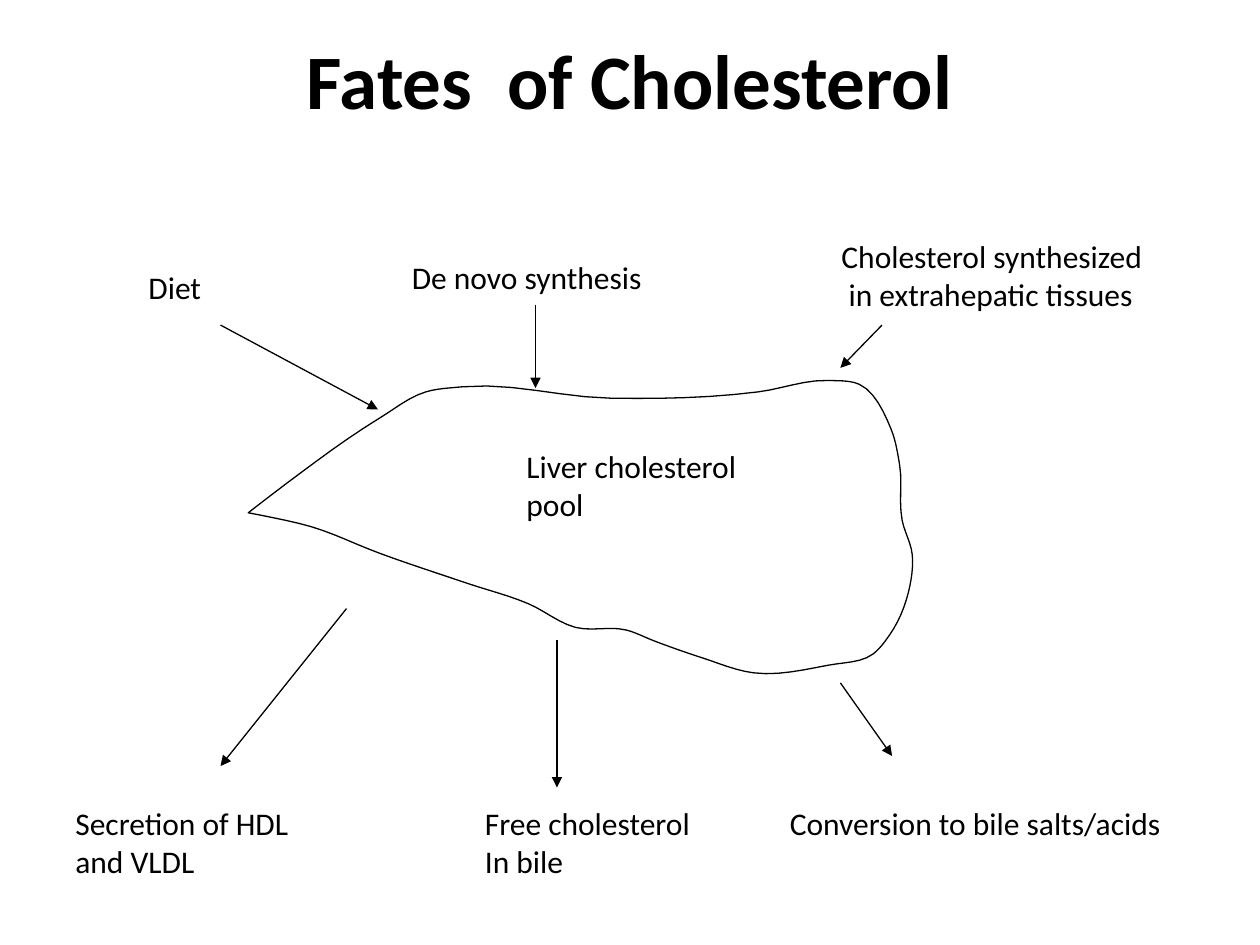
from pptx import Presentation
from pptx.dml.color import RGBColor
from pptx.enum.shapes import MSO_CONNECTOR
from pptx.enum.text import MSO_ANCHOR, MSO_AUTO_SIZE, PP_ALIGN
from pptx.oxml.ns import qn
from pptx.util import Inches, Pt
from lxml import etree

BLACK = RGBColor(0, 0, 0)
STRAIGHT = MSO_CONNECTOR.STRAIGHT
MIDDLE = MSO_ANCHOR.MIDDLE
CENTER = PP_ALIGN.CENTER
LEFT = PP_ALIGN.LEFT
GROW = MSO_AUTO_SIZE.SHAPE_TO_FIT_TEXT
FONT = "Calibri"
STEPS = 6
ONE_ROW, TWO_ROWS = 0.4, 0.7
BASE = 6.33

TITLE = (0.5, 0, 9, 1.25)
LABELS = [
    (1.08, 2.08, 0.65, ["Diet"]),
    (3.17, 2, 2.24, ["De novo synthesis"]),
    (6.58, 1.83, 2.85,
     ["Cholesterol synthesized", " in extrahepatic tissues"]),
    (4.08, 3.5, 2.02, ["Liver cholesterol", "pool"]),
    (3.75, BASE, 1.99, ["Free cholesterol", "In bile"]),
    (6.17, BASE, 3.44, ["Conversion to bile salts/acids"]),
    (0.5, BASE, 2.1, ["Secretion of HDL", "and VLDL"]),
]
ARROWS = [
    (1.75, 2.58, 3, 3.25),
    (4.25, 2.42, 4.25, 3.08),
    (7, 2.58, 6.67, 2.92),
    (4.42, 5.08, 4.42, 6.25),
    (6.67, 5.42, 7.08, 6),
    (2.75, 4.83, 1.75, 6.08),
]
LIVER = (1.97, 3.02)
EDGE = [
    (0, 1.05), (0.3, 0.82), (1.04, 0.3), (1.41, 0.09), (1.7, 0.05),
    (2.87, 0.14), (4.05, 0.09), (4.59, 0), (4.85, 0.03), (5.1, 0.38),
    (5.17, 0.67), (5.19, 1.11), (5.27, 1.38), (5.24, 1.68), (5.09, 2.02),
    (4.96, 2.17), (4.6, 2.26), (4.01, 2.32), (3.6, 2.2), (3.23, 2.07),
    (3, 1.98), (2.6, 1.96), (2.22, 1.77), (1.74, 1.61), (1.04, 1.37),
    (0.5, 1.16), (0, 1.05),
]


def add_text(slide, box, lines, size, bold=False, align=LEFT):
    shape = slide.shapes.add_textbox(*map(Inches, box))
    frame = shape.text_frame
    for num, line in enumerate(lines):
        para = frame.add_paragraph() if num else frame.paragraphs[0]
        para.alignment = align
        run = para.add_run()
        run.text = line
        run.font.name = FONT
        run.font.size = Pt(size)
        run.font.bold = bold
        run.font.color.rgb = BLACK
    return frame


def add_title(slide, box):
    frame = add_text(slide, box, ["Fates  of Cholesterol"], 44, True, CENTER)
    frame.word_wrap = True
    frame.vertical_anchor = MIDDLE


def add_label(slide, left, top, width, lines):
    height = ONE_ROW if len(lines) == 1 else TWO_ROWS
    frame = add_text(slide, (left, top, width, height), lines, 18)
    frame.word_wrap = False
    frame.auto_size = GROW


def set_line(shape):
    shape.line.color.rgb = BLACK
    shape.line.width = Pt(0.75)


def add_arrow(slide, ends):
    arrow = slide.shapes.add_connector(STRAIGHT, *map(Inches, ends))
    set_line(arrow)
    tail = etree.SubElement(arrow.line._get_or_add_ln(), qn("a:tailEnd"))
    tail.set("type", "triangle")
    etree.SubElement(arrow._element.spPr, qn("a:effectLst"))


def gap(start, end):
    return max(abs(complex(*end) - complex(*start)), 0.01)


def slopes(points):
    ends = [points[0]] + points + [points[-1]]
    for prev, here, after in zip(ends, points, ends[2:]):
        back, ahead = gap(prev, here), gap(here, after)
        yield [((h - p) / back * ahead + (a - h) / ahead * back)
               / (back + ahead) for p, h, a in zip(prev, here, after)]


def smooth(points):
    leans = list(slopes(points))
    result = points[:1]
    for start, end, out, into in zip(points, points[1:], leans, leans[1:]):
        size = gap(start, end)
        for step in range(1, STEPS + 1):
            t = step / STEPS
            u = 1 - t
            result.append([
                u * u * (1 + 2 * t) * s + t * t * (3 - 2 * t) * e
                + size * t * u * (u * o - t * i)
                for s, e, o, i in zip(start, end, out, into)])
    return result


def add_liver(slide, corner):
    left, top = corner
    spots = [(Inches(left + x), Inches(top + y)) for x, y in smooth(EDGE)]
    path = slide.shapes.build_freeform(*spots[0])
    path.add_line_segments(spots[1:], close=True)
    liver = path.convert_to_shape()
    liver.shadow.inherit = False
    liver.fill.background()
    set_line(liver)


def main():
    deck = Presentation()
    deck.slide_width = Inches(10)
    deck.slide_height = Inches(7.5)
    slide = deck.slides.add_slide(deck.slide_layouts[6])
    add_title(slide, TITLE)
    add_liver(slide, LIVER)
    for label in LABELS:
        add_label(slide, *label)
    for ends in ARROWS:
        add_arrow(slide, ends)
    deck.save("out.pptx")


if __name__ == "__main__":
    main()
